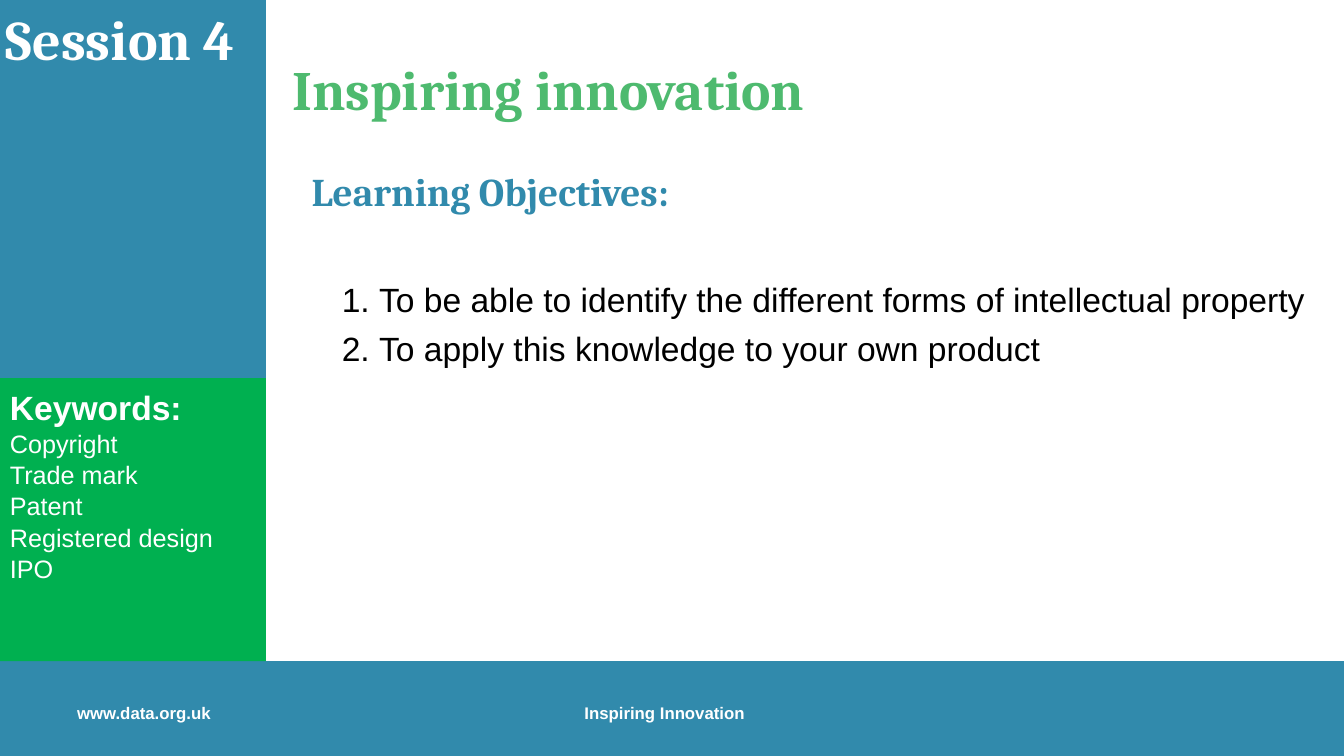
import pptx
import pptx.dml.color
import pptx.enum.shapes
import pptx.enum.text
import pptx.oxml.ns
import pptx.util
from lxml import etree

Pt = pptx.util.Pt
COLORS = {"blue": "318AAC", "green": "00B050", "heading": "4EBA6F",
          "white": "FFFFFF", "black": "000000"}
SLIDE_WIDTH, SLIDE_HEIGHT = 960, 540
SIDEBAR_WIDTH, CONTENT_HEIGHT = 190, 472.3
KEYWORDS_TOP = 270


def style(paragraph, size, color, font="Arial", bold=False):
    """Left-align a paragraph and format its runs."""
    paragraph.alignment = pptx.enum.text.PP_ALIGN.LEFT
    for run in paragraph.runs:
        run.font.name = font
        run.font.size = Pt(size)
        run.font.bold = bold
        run.font.color.rgb = pptx.dml.color.RGBColor.from_string(COLORS[color])


def prepare_frame(frame, inset=7.2):
    """Wrap a text frame, anchor it at the top and set its insets."""
    frame.word_wrap = True
    frame.auto_size = pptx.enum.text.MSO_AUTO_SIZE.NONE
    frame.vertical_anchor = pptx.enum.text.MSO_ANCHOR.TOP
    frame.margin_left = frame.margin_right = Pt(inset)
    frame.margin_top = frame.margin_bottom = Pt(3.6)


def add_panel(slide, left, top, width, height, color):
    """Add a plain filled rectangle."""
    panel = slide.shapes.add_shape(
        pptx.enum.shapes.MSO_SHAPE.RECTANGLE, Pt(left), Pt(top), Pt(width), Pt(height))
    panel.shadow.inherit = False
    panel.fill.solid()
    panel.fill.fore_color.rgb = pptx.dml.color.RGBColor.from_string(COLORS[color])
    panel.line.fill.background()
    return panel


def add_text(slide, left, top, width, height, text, inset=7.2):
    """Add a text box and return its text frame."""
    frame = slide.shapes.add_textbox(Pt(left), Pt(top), Pt(width), Pt(height)).text_frame
    prepare_frame(frame, inset)
    frame.text = text
    return frame


def add_footer(slide, left, top, width, height):
    """Add the bottom band with the web address and course name."""
    add_panel(slide, left, top, width, height, "blue")
    for label, offset in (("www.data.org.uk", 48), ("Inspiring Innovation", 410.4)):
        caption = add_text(slide, left + offset, top + 26, 163.4, 25.2, label)
        style(caption.paragraphs[0], 12, "white", bold=True)


def add_session(slide, left, top, width, height):
    """Add the sidebar panel with the session number."""
    add_panel(slide, left, top, width, height, "blue")
    session = add_text(slide, left, top, width, 55.4, "Session 4", inset=4)
    style(session.paragraphs[0], 40, "white", "Cambria", True)


def add_keywords(slide, left, top, width, height):
    """Add the sidebar panel that lists the keywords."""
    frame = add_panel(slide, left, top, width, height, "green").text_frame
    prepare_frame(frame)
    frame.margin_top = Pt(6)
    frame.text = "Keywords:"
    style(frame.paragraphs[0], 24, "white", bold=True)
    for keyword in ("Copyright", "Trade mark", "Patent", "Registered design", "IPO"):
        entry = frame.add_paragraph()
        entry.text = keyword
        entry.line_spacing = 1.04
        style(entry, 18, "white")


def place_title(slide, left, top, width, height):
    """Move and format the slide title."""
    title = slide.shapes.title
    title.left, title.top, title.width, title.height = map(Pt, (left, top, width, height))
    prepare_frame(title.text_frame)
    title.text_frame.text = "Inspiring innovation"
    style(title.text_frame.paragraphs[0], 39.6, "heading", "Cambria", True)


def add_objectives(slide, left, top, width, height):
    """Add the heading and numbered learning objectives."""
    frame = add_text(slide, left, top, width, height, "Learning Objectives:")
    style(frame.paragraphs[0], 28, "blue", "Cambria", True)
    objectives = ("To be able to identify the different forms of intellectual property",
                  "To apply this knowledge to your own product")
    for objective, gap in zip(objectives, (46, 6)):
        item = frame.add_paragraph()
        item.text = objective
        item.space_before = Pt(gap)
        properties = item._p.get_or_add_pPr()
        properties.set("marL", str(Pt(48.2)))
        properties.set("indent", str(Pt(-26.6)))
        etree.SubElement(properties, pptx.oxml.ns.qn("a:buFont"), typeface="Arial")
        etree.SubElement(properties, pptx.oxml.ns.qn("a:buAutoNum"), type="arabicPeriod")
        style(item, 24, "black")


def main():
    """Build and save the session slide."""
    deck = pptx.Presentation()
    deck.slide_width, deck.slide_height = Pt(SLIDE_WIDTH), Pt(SLIDE_HEIGHT)
    slide = deck.slides.add_slide(deck.slide_layouts[5])
    add_footer(slide, 0, CONTENT_HEIGHT, SLIDE_WIDTH, SLIDE_HEIGHT - CONTENT_HEIGHT)
    add_session(slide, 0, 0, SIDEBAR_WIDTH, CONTENT_HEIGHT)
    add_keywords(slide, 0, KEYWORDS_TOP, SIDEBAR_WIDTH, CONTENT_HEIGHT - KEYWORDS_TOP)
    place_title(slide, 201.6, 36, 483.8, 54)
    add_objectives(slide, 215.5, 116, 728, CONTENT_HEIGHT - 116)
    deck.save("out.pptx")


if __name__ == "__main__":
    main()
